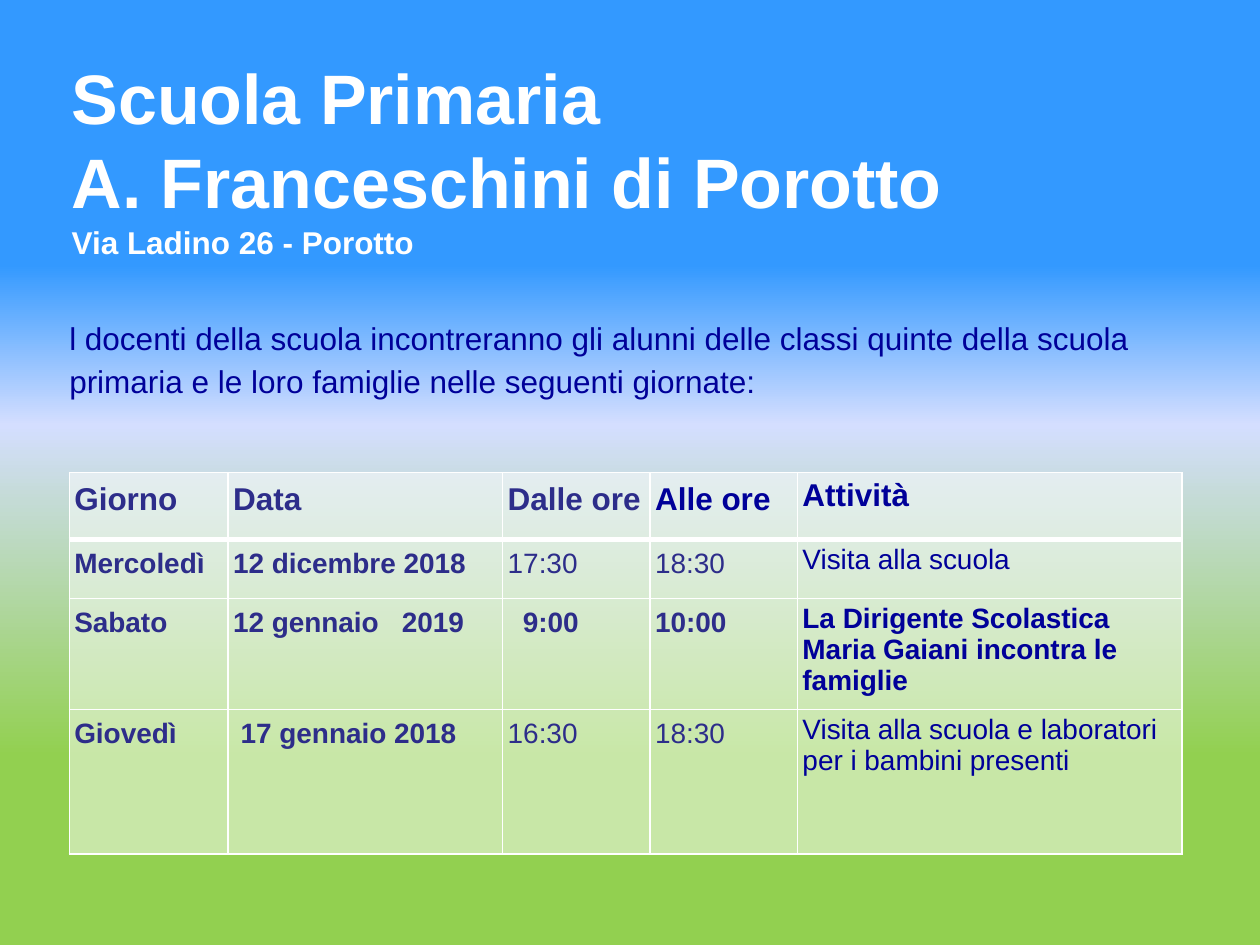
from lxml import etree
from pptx import Presentation
from pptx import util as u
from pptx.dml.color import RGBColor
from pptx.enum import text
from pptx.oxml import ns

WHITE = RGBColor(0xFF, 0xFF, 0xFF)
NAVY = RGBColor(0x00, 0x00, 0x99)
INDIGO = RGBColor(0x2D, 0x2D, 0x8A)
SKY = RGBColor(0x33, 0x99, 0xFF)
LILAC = RGBColor(0xD4, 0xDE, 0xFF)
MIST = RGBColor(0xC4, 0xDB, 0xD5)
GRASS = RGBColor(0x92, 0xD0, 0x50)

FONT = "Arial"
LEFT, WIDTH = 0.55, 8.83
BACKDROP = [(0, SKY), (28, SKY), (45, LILAC), (53, MIST), (80, GRASS), (100, GRASS)]

COLUMNS = [1.26, 2.18, 1.17, 1.17, 3.05]
ROWS = [0.53, 0.47, 0.88, 1.15]
MEETINGS = [
    ["Giorno", "Data", "Dalle ore", "Alle ore", "Attività"],
    ["Mercoledì", "12 dicembre 2018", "17:30", "18:30", "Visita alla scuola"],
    ["Sabato", "12 gennaio\t2019", "9:00", "10:00",
     "La Dirigente Scolastica Maria Gaiani incontra le famiglie"],
    ["Giovedì", "17 gennaio 2018", "16:30", "18:30",
     "Visita alla scuola e laboratori per i bambini presenti"],
]
HEADER, OPEN_DAY = 0, 2          # rows set wholly in bold
START, END, ACTIVITY = 2, 3, 4   # column numbers
INDENTS = {(2, START): 0.12, (3, 1): 0.06}
YEAR_TAB = 1.34


def child(parent, tag, **attributes):
    return etree.SubElement(parent, ns.qn(tag), {k: str(v) for k, v in attributes.items()})


def paint_backdrop(page):
    """Vertical gradient from sky to grass."""
    fill = page.background.fill
    fill.gradient()
    gradient = page.background._cSld.find(".//" + ns.qn("a:gradFill"))
    for part in list(gradient):
        gradient.remove(part)
    stops = child(gradient, "a:gsLst")
    for share, color in BACKDROP:
        stop = child(stops, "a:gs", pos=share * 1000)
        child(stop, "a:srgbClr", val=color)
    child(gradient, "a:lin", ang=90 * 60000, scaled=0)


def add_span(para, words, size, color, bold=False):
    span = para.add_run()
    span.text = words
    font = span.font
    font.name, font.size, font.bold = FONT, u.Pt(size), bold
    font.color.rgb = color


def add_text_box(page, left, top, width, height):
    box = page.shapes.add_textbox(*map(u.Inches, (left, top, width, height)))
    box.text_frame.word_wrap = True
    box.text_frame.vertical_anchor = text.MSO_ANCHOR.MIDDLE
    return box.text_frame


def add_title(page):
    para = add_text_box(page, 0.47, 0.47, 9, 1.56).paragraphs[0]
    for line in ("Scuola Primaria", "A. Franceschini di Porotto"):
        add_span(para, line, 40, WHITE, True)
        para.add_line_break()
    add_span(para, "Via Ladino 26 - Porotto", 18, WHITE, True)


def add_introduction(page):
    frame = add_text_box(page, LEFT, 2.5, WIDTH, 0.66)
    frame.margin_left = frame.margin_right = frame.margin_top = frame.margin_bottom = 0
    para = frame.paragraphs[0]
    para.line_spacing = 1.14
    add_span(para, "l docenti della scuola incontreranno gli alunni delle classi quinte "
                   "della scuola primaria e le loro famiglie nelle seguenti giornate:", 18, NAVY)


def style_cell(cell, row):
    """Half-transparent white fill and white borders, thick below the header."""
    cell.fill.solid()
    cell.fill.fore_color.rgb = WHITE
    properties = cell._tc.tcPr
    child(properties.find(".//" + ns.qn("a:srgbClr")), "a:alpha", val=50000)
    widths = {"L": 1, "R": 1, "T": 3 if row == HEADER + 1 else 1, "B": 3 if row == HEADER else 1}
    for place, (side, width) in enumerate(widths.items()):
        line = etree.Element(ns.qn("a:ln" + side), w=str(u.Pt(width)))
        child(child(line, "a:solidFill"), "a:srgbClr", val=WHITE)
        properties.insert(place, line)


def fill_cell(cell, words, row, column):
    margin = u.Inches(0.04)
    cell.margin_left = margin + u.Inches(INDENTS.get((row, column), 0))
    cell.margin_right = cell.margin_top = cell.margin_bottom = margin
    para = cell.text_frame.paragraphs[0]
    if column != ACTIVITY:
        para.line_spacing = 1.13
        para.space_after = u.Pt(9)
    if "\t" in words:
        tabs = child(para._p.get_or_add_pPr(), "a:tabLst")
        child(tabs, "a:tab", pos=u.Inches(YEAR_TAB), algn="l")
    is_navy = column == ACTIVITY or (row, column) == (HEADER, END)
    add_span(para, words, 18 if row == HEADER else 16, NAVY if is_navy else INDIGO,
             row in (HEADER, OPEN_DAY) or column < START)


def add_meetings(page):
    frame = page.shapes.add_table(len(ROWS), len(COLUMNS), u.Inches(LEFT), u.Inches(3.75),
                                  u.Inches(WIDTH), u.Inches(sum(ROWS)))
    table = frame.table
    table.first_row = table.horz_banding = False
    for column, width in zip(table.columns, COLUMNS):
        column.width = u.Inches(width)
    for row, height in zip(table.rows, ROWS):
        row.height = u.Inches(height)
    for r, entries in enumerate(MEETINGS):
        for c, words in enumerate(entries):
            cell = table.cell(r, c)
            fill_cell(cell, words, r, c)
            style_cell(cell, r)


def main():
    deck = Presentation()
    deck.slide_width, deck.slide_height = u.Inches(10), u.Inches(7.5)
    page = deck.slides.add_slide(deck.slide_layouts[6])
    paint_backdrop(page)
    add_title(page)
    add_introduction(page)
    add_meetings(page)
    deck.save("out.pptx")


if __name__ == "__main__":
    main()
